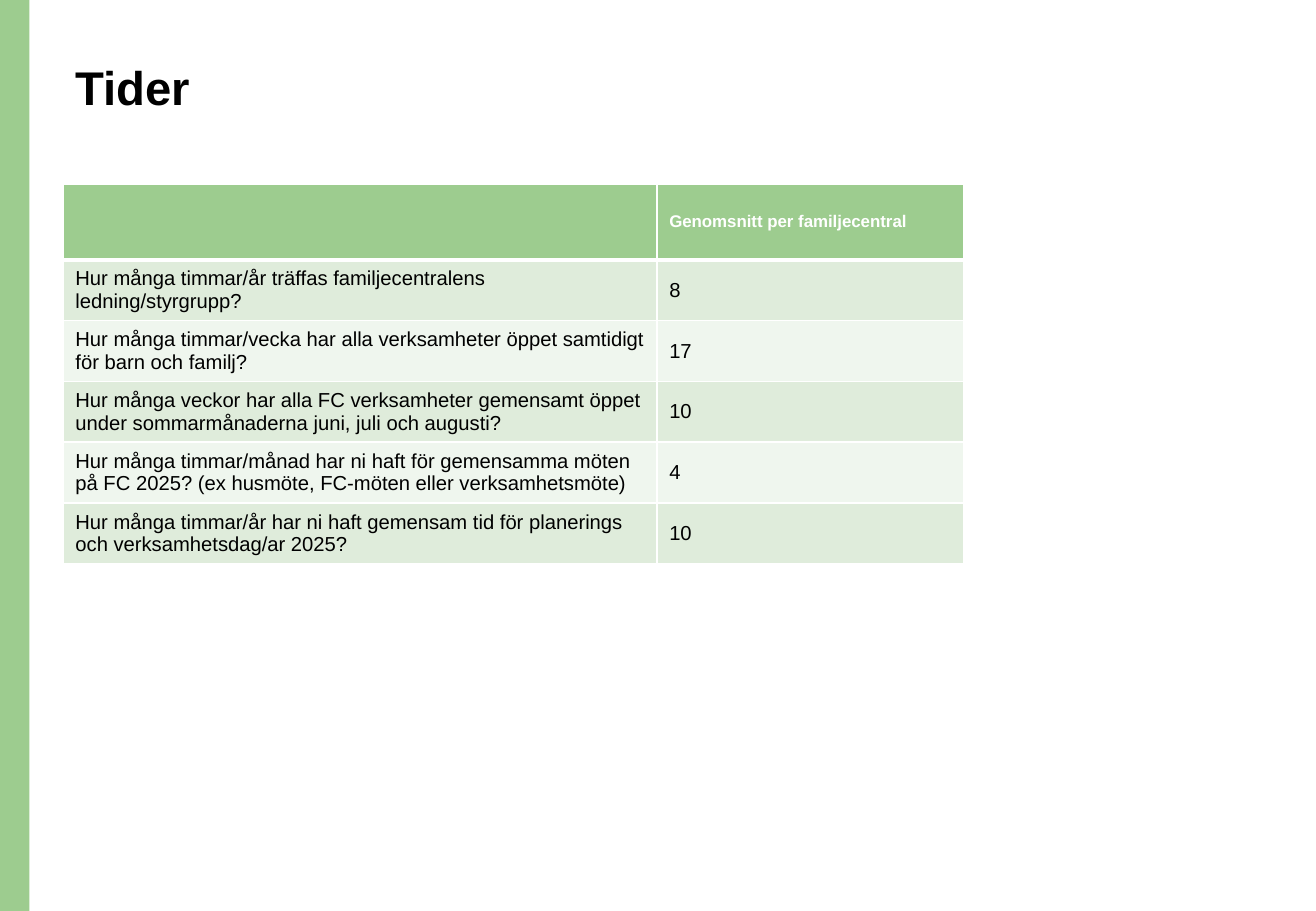
from lxml.etree import SubElement
from pptx import Presentation
from pptx.dml.color import RGBColor
from pptx.enum.shapes import MSO_SHAPE
from pptx.enum.text import MSO_ANCHOR
from pptx.oxml.ns import qn
from pptx.util import Pt

GREEN = RGBColor(0x9D, 0xCC, 0x8F)
BAND_DARK = RGBColor(0xDF, 0xEC, 0xDB)
BAND_LIGHT = RGBColor(0xEF, 0xF6, 0xEE)
WHITE = RGBColor(0xFF, 0xFF, 0xFF)
BLACK = RGBColor(0x00, 0x00, 0x00)
FONT = "Arial"

SLIDE_WIDTH, SLIDE_HEIGHT = 780, 540
HEADER_HEIGHT, ROW_HEIGHT = 45, 34
COLUMN_WIDTHS = (352, 182)

ROWS = [
    ("", "Genomsnitt per familjecentral"),
    ("Hur många timmar/år träffas familjecentralens ledning/styrgrupp?", "8"),
    ("Hur många timmar/vecka har alla verksamheter öppet samtidigt för barn och familj?", "17"),
    ("Hur många veckor har alla FC verksamheter gemensamt öppet under sommarmånaderna "
     "juni, juli och augusti?", "10"),
    ("Hur många timmar/månad har ni haft för gemensamma möten på FC 2025? "
     "(ex husmöte, FC-möten eller verksamhetsmöte)", "4"),
    ("Hur många timmar/år har ni haft gemensam tid för planerings och "
     "verksamhetsdag/ar 2025?", "10"),
]


def set_font(paragraph, size, color, bold):
    font = paragraph.font
    font.name, font.size, font.bold = FONT, Pt(size), bold
    font.color.rgb = color


def add_side_bar(slide, left, top, width, height):
    bar = slide.shapes.add_shape(MSO_SHAPE.RECTANGLE, Pt(left), Pt(top), Pt(width), Pt(height))
    bar.shadow.inherit = False
    bar.fill.solid()
    bar.fill.fore_color.rgb = GREEN
    bar.line.fill.background()


def add_title(slide, left, top, width, height):
    title = slide.shapes.add_textbox(Pt(left), Pt(top), Pt(width), Pt(height))
    title.text_frame.word_wrap = True
    heading = title.text_frame.paragraphs[0]
    heading.text = "Tider"
    heading.line_spacing = 0.9
    set_font(heading, 28, BLACK, True)


def add_borders(cell, top_width, bottom_width):
    """Draw white lines around a cell; call before the cell gets its fill."""
    properties = cell._tc.get_or_add_tcPr()
    widths = {"a:lnL": 1, "a:lnR": 1, "a:lnT": top_width, "a:lnB": bottom_width}
    for side, width in widths.items():
        line = SubElement(properties, qn(side), w=str(Pt(width)))
        fill = SubElement(line, qn("a:solidFill"))
        SubElement(fill, qn("a:srgbClr"), val=str(WHITE))


def add_times_table(slide, left, top):
    height = HEADER_HEIGHT + ROW_HEIGHT * (len(ROWS) - 1)
    times = slide.shapes.add_table(len(ROWS), len(COLUMN_WIDTHS), Pt(left), Pt(top),
                                   Pt(sum(COLUMN_WIDTHS)), Pt(height)).table
    for column, width in zip(times.columns, COLUMN_WIDTHS):
        column.width = Pt(width)

    for r, texts in enumerate(ROWS):
        is_header = r == 0
        times.rows[r].height = Pt(HEADER_HEIGHT if is_header else ROW_HEIGHT)
        band = GREEN if is_header else (BAND_LIGHT, BAND_DARK)[r % 2]
        for c, text in enumerate(texts):
            cell = times.cell(r, c)
            add_borders(cell, 3 if r == 1 else 1, 3 if is_header else 1)
            cell.fill.solid()
            cell.fill.fore_color.rgb = band
            cell.vertical_anchor = MSO_ANCHOR.MIDDLE
            cell.text = text
            set_font(cell.text_frame.paragraphs[0], 10 if is_header else 12,
                     WHITE if is_header else BLACK, is_header)


def main():
    presentation = Presentation()
    presentation.slide_width, presentation.slide_height = Pt(SLIDE_WIDTH), Pt(SLIDE_HEIGHT)
    slide = presentation.slides.add_slide(presentation.slide_layouts[6])
    add_side_bar(slide, 0, 0, 17.5, SLIDE_HEIGHT)
    add_title(slide, 37.5, 34.5, 672.5, 73.5)
    add_times_table(slide, 37.5, 109)
    presentation.save("out.pptx")


if __name__ == "__main__":
    main()
